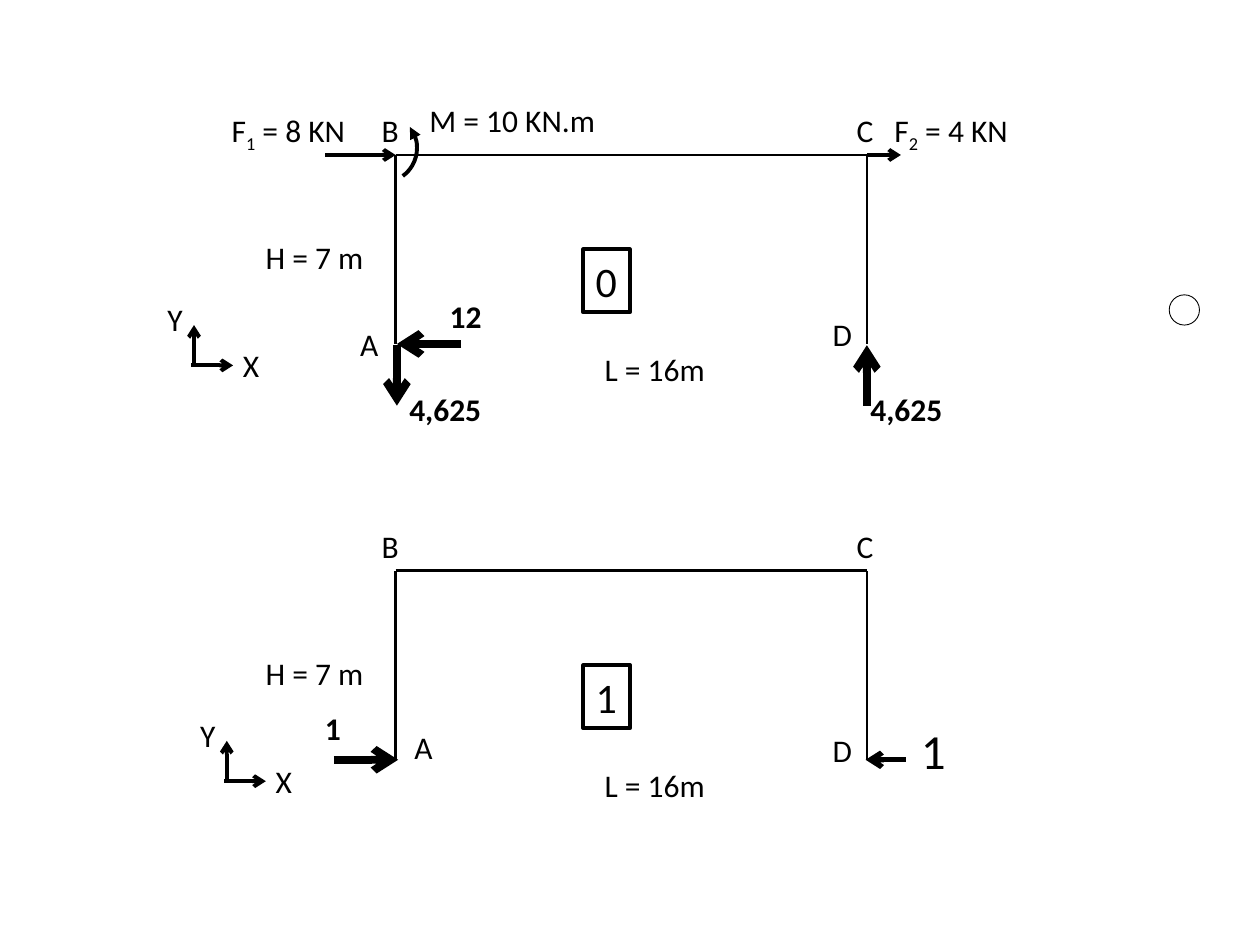
from lxml import etree
from pptx import Presentation
from pptx.dml.color import RGBColor
from pptx.enum.shapes import MSO_CONNECTOR, MSO_SHAPE
from pptx.enum.text import MSO_AUTO_SIZE
from pptx.oxml.ns import qn
from pptx.util import Pt

PX = 9144  # EMU per px, 100 px to the inch
BLACK = RGBColor(0, 0, 0)
FONT = "Calibri"
STRAIGHT = MSO_CONNECTOR.STRAIGHT
ARC, ELLIPSE = MSO_SHAPE.ARC, MSO_SHAPE.OVAL
FIT_SHAPE = MSO_AUTO_SIZE.SHAPE_TO_FIT_TEXT

LEFT, RIGHT, HEIGHT = 314, 688, 150  # portal frame columns
LABEL_HEIGHT = 40

# Each case: top of its beam, case number, left of its axes
CASES = [(123, "0", 123), (453, "1", 149)]

# Labels in every case: text, left, top below the beam, width
FRAME_LABELS = [
    ("B", 293, -40, 34),
    ("C", 670, -40, 34),
    ("H = 7 m", 201, 61, 99),
    ("L = 16m", 470, 150, 101),
    ("D", 651, 122, 36),
]
# Text, left, top, width, format; "_" comes before a subscript digit
LABELS = [
    ("M = 10 KN.m", 331, 75, 153, {}),
    ("F_1 = 8 KN", 174, 83, 113, {}),
    ("F_2 = 4 KN", 700, 83, 113, {}),
    ("A", 276, 253, 36, {}),
    ("12", 347, 231, 46, {"bold": True}),
    ("4,625", 315, 305, 78, {"bold": True}),
    ("4,625", 681, 305, 78, {"bold": True}),
    ("A", 319, 573, 36, {}),
    ("1", 248, 558, 33, {"bold": True}),
    ("1", 721, 567, 41, {"size": 28, "height": 57}),
]
# Start, end, weight
FORCES = [
    ((258, 123), (314, 123), 2.25),
    ((688, 123), (715, 123), 2.25),
    ((366, 273), (315, 273), 4.5),
    ((315, 274), (315, 322), 4.5),
    ((688, 322), (688, 274), 4.5),
    ((265, 603), (316, 603), 4.5),
    ((719, 603), (687, 603), 3),
]


def emu(*lengths):
    return [length * PX for length in lengths]


def add_arrowhead(shape, end, kind):
    outline = shape.line._get_or_add_ln()
    etree.SubElement(outline, qn(f"a:{end}"), type=kind)


def add_line(shapes, start, end, weight=1.5, arrow=False):
    line = shapes.add_connector(STRAIGHT, *emu(*start, *end))
    line.line.color.rgb = BLACK
    line.line.width = Pt(weight)
    if arrow:
        add_arrowhead(line, "tailEnd", "arrow")
    etree.SubElement(line._element.spPr, qn("a:effectLst"))


def add_label(shapes, text, left, top, width, height=LABEL_HEIGHT,
              size=18, bold=False, border=None):
    label = shapes.add_textbox(*emu(left, top, width, height))
    if border:
        label.line.color.rgb = BLACK
        label.line.width = Pt(border)
    frame = label.text_frame
    frame.word_wrap = False
    frame.auto_size = FIT_SHAPE
    base, _, rest = text.partition("_")
    for part, baseline in ((base, 0), (rest[:1], -25000), (rest[1:], 0)):
        if not part:
            continue
        run = frame.paragraphs[0].add_run()
        run.text = part
        run.font.name = FONT
        run.font.size = Pt(size)
        run.font.bold = bold
        run.font.color.rgb = BLACK
        if baseline:
            run._r.get_or_add_rPr().set("baseline", str(baseline))


def add_outline(shapes, preset, left, top, size, weight):
    shape = shapes.add_shape(preset, *emu(left, top, size, size))
    shape.shadow.inherit = False
    shape.fill.background()
    shape.line.color.rgb = BLACK
    shape.line.width = Pt(weight)
    return shape


def add_axes(shapes, left, top):
    axes = shapes.add_group_shape().shapes
    add_line(axes, (left + 31, top + 58), (left + 31, top + 25), 2.25, True)
    add_line(axes, (left + 29, top + 57), (left + 62, top + 57), 2.25, True)
    add_label(axes, "Y", left, top, 32)
    add_label(axes, "X", left + 60, top + 37, 33)


def add_case(shapes, beam, number, axes_left):
    for column in (LEFT, RIGHT):
        add_line(shapes, (column, beam + HEIGHT), (column, beam))
    add_line(shapes, (LEFT, beam), (RIGHT, beam))
    for text, left, drop, width in FRAME_LABELS:
        add_label(shapes, text, left, beam + drop, width)
    add_label(shapes, number, 463, beam + 75, 37, height=50, size=24, border=2.25)
    add_axes(shapes, axes_left, beam + 110)


def main():
    deck = Presentation()
    deck.slide_width, deck.slide_height = emu(1000, 750)
    shapes = deck.slides.add_slide(deck.slide_layouts[6]).shapes
    for case in CASES:
        add_case(shapes, *case)
    add_outline(shapes, ELLIPSE, 928, 234, 24, 0.5)
    moment = add_outline(shapes, ARC, 276, 90, 55, 2.25)
    moment.adjustments[0] = 193.6
    moment.adjustments[1] = 32.32
    add_arrowhead(moment, "headEnd", "triangle")
    for start, end, weight in FORCES:
        add_line(shapes, start, end, weight, arrow=True)
    for text, left, top, width, style in LABELS:
        add_label(shapes, text, left, top, width, **style)
    deck.save("out.pptx")


if __name__ == "__main__":
    main()
